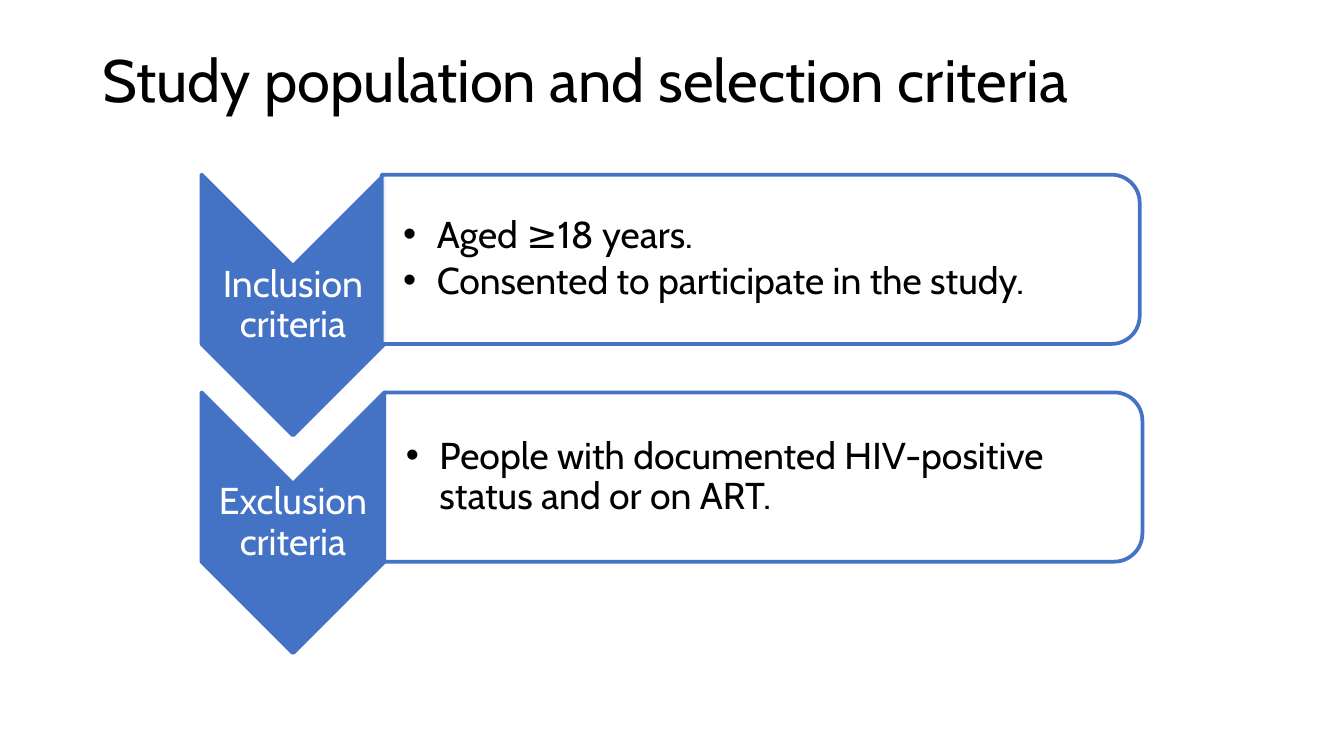
import pptx
import pptx.dml.color
import pptx.enum.shapes
import pptx.enum.text
import pptx.oxml
import pptx.oxml.ns
import pptx.util
from lxml import etree
from pptx.util import Inches

FONT = "Cabin"
BLUE, WHITE, BLACK = "4472C4", "FFFFFF", "000000"
CHEVRON_WIDTH, CHEVRON_NOTCH = 1.36, 0.68
PANEL_WIDTH, PANEL_HEIGHT = 5.64, 1.26
CRITERIA = [
    ("Inclusion criteria", 6.98, ["Aged ≥18 years.", "Consented to participate in the study."]),
    ("Exclusion criteria", 7, ["People with documented HIV-positive status and or on ART."]),
]


def color(value):
    """Turn a hex string into a colour."""
    return pptx.dml.color.RGBColor.from_string(value)


def add_bullet(paragraph):
    """Give a paragraph a hanging black bullet."""
    properties = paragraph._p.get_or_add_pPr()
    properties.set("marL", str(Inches(0.25)))
    properties.set("indent", str(Inches(-0.25)))
    bullet_color = etree.SubElement(properties, pptx.oxml.ns.qn("a:buClr"))
    etree.SubElement(bullet_color, pptx.oxml.ns.qn("a:srgbClr"), val=BLACK)
    etree.SubElement(properties, pptx.oxml.ns.qn("a:buFont"), typeface="Arial")
    etree.SubElement(properties, pptx.oxml.ns.qn("a:buChar"), char="•")


def add_text(slide, box, lines, size, text_color, margins, centered=False, bulleted=False):
    """Place a vertically centred text box in the given box."""
    text_frame = slide.shapes.add_textbox(*map(Inches, box)).text_frame
    text_frame.word_wrap = True
    text_frame.vertical_anchor = pptx.enum.text.MSO_ANCHOR.MIDDLE
    text_frame.margin_left, text_frame.margin_top, text_frame.margin_right, text_frame.margin_bottom = map(
        Inches, margins)
    text_frame.text = "\n".join(lines)
    for paragraph in text_frame.paragraphs:
        if bulleted:
            add_bullet(paragraph)
            paragraph.space_after = pptx.util.Pt(3)
        if centered:
            paragraph.alignment = pptx.enum.text.PP_ALIGN.CENTER
        paragraph.line_spacing = 0.9
        for run in paragraph.runs:
            run.font.name = FONT
            run.font.size = pptx.util.Pt(size)
            run.font.color.rgb = color(text_color)


def add_turned_shape(slide, kind, box, fill):
    """Place a shape turned by 90 degrees so that it covers the given box."""
    left, top, width, height = box
    shift = (width - height) / 2
    shape = slide.shapes.add_shape(
        kind, Inches(left + shift), Inches(top - shift), Inches(height), Inches(width))
    shape.rotation = 90
    shape.shadow.inherit = False
    shape.fill.solid()
    shape.fill.fore_color.rgb = color(fill)
    shape.line.color.rgb = color(BLUE)
    shape.line.width = pptx.util.Pt(2)
    return shape


def add_criteria_row(slide, box, label, items):
    """Place a labelled chevron with its panel of bulleted criteria."""
    left, top, width, height = box
    shapes = pptx.enum.shapes.MSO_SHAPE
    add_turned_shape(slide, shapes.CHEVRON, (left, top, CHEVRON_WIDTH, height), BLUE)
    label_box = (left, top + CHEVRON_NOTCH, CHEVRON_WIDTH, height - 2 * CHEVRON_NOTCH)
    add_text(slide, label_box, [label], 20, WHITE, (0.01,) * 4, centered=True)

    panel_left = left + width - PANEL_WIDTH
    panel = add_turned_shape(
        slide, shapes.ROUND_2_SAME_RECTANGLE, (panel_left, top, PANEL_WIDTH, PANEL_HEIGHT), WHITE)
    fill_color = panel.element.spPr.find(".//" + pptx.oxml.ns.qn("a:srgbClr"))
    etree.SubElement(fill_color, pptx.oxml.ns.qn("a:alpha"), val="90000")
    items_box = (panel_left, top + 0.06, PANEL_WIDTH - 0.06, PANEL_HEIGHT - 0.12)
    add_text(slide, items_box, items, 20, BLACK, (0.16, 0.01, 0.01, 0.01), bulleted=True)


def main():
    """Build the slide and save it."""
    presentation = pptx.Presentation()
    presentation.slide_width = Inches(10)
    presentation.slide_height = Inches(10 * 9 / 16)
    slide = presentation.slides.add_slide(presentation.slide_layouts[6])
    add_text(slide, (0.69, 0.23, 8.62, 0.78), ["Study population and selection criteria"],
             32, BLACK, (0.07, 0.04, 0.07, 0.04))
    for index, (label, width, items) in enumerate(CRITERIA):
        add_criteria_row(slide, (1.5, 1.3 + 1.62 * index, width, 1.94), label, items)
    presentation.save("out.pptx")


if __name__ == "__main__":
    main()
